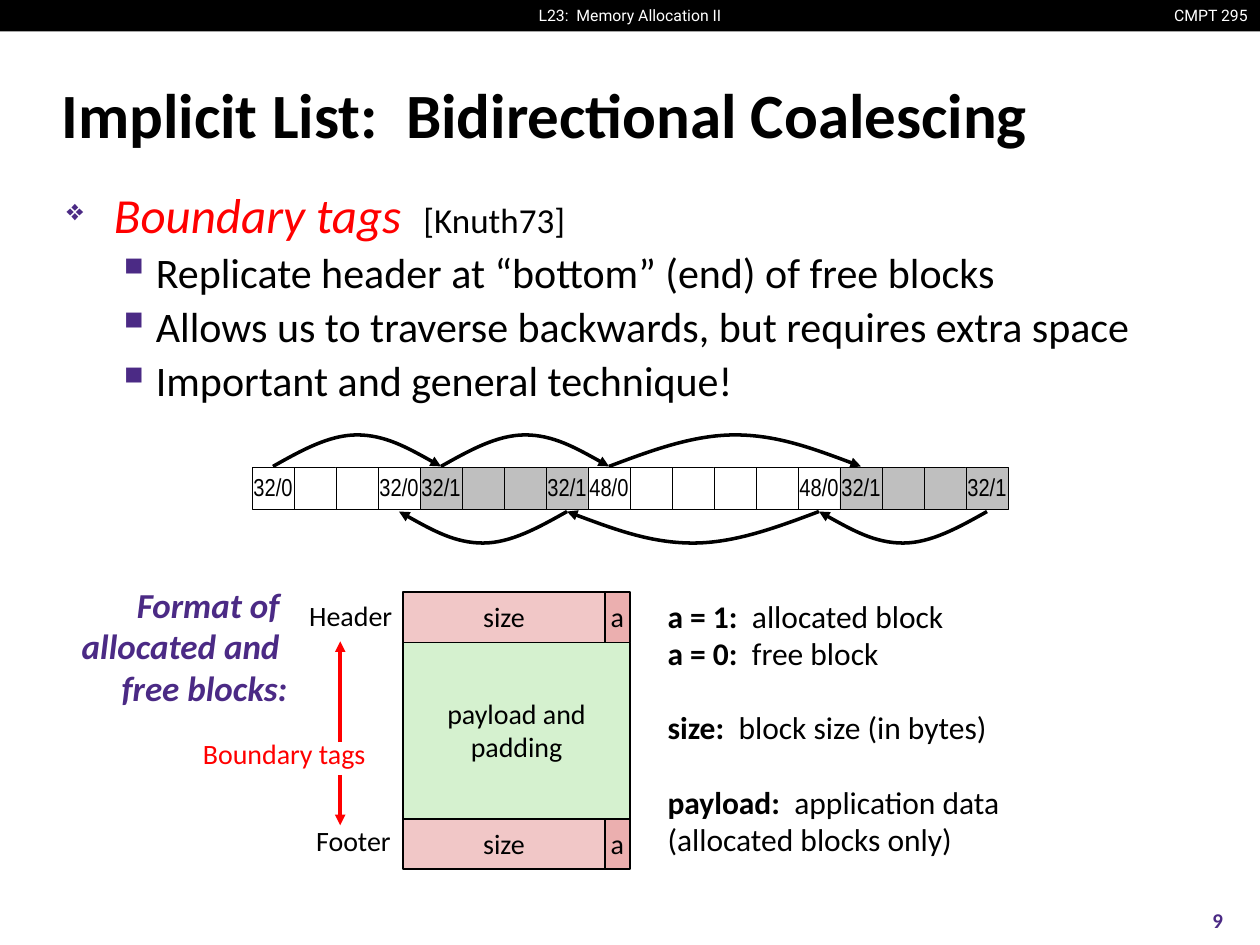
import dataclasses

import pptx
import pptx.dml.color
import pptx.enum.shapes
import pptx.enum.text
import pptx.oxml.ns
import pptx.oxml.xmlchemy
import pptx.util
import lxml.etree

Pt = pptx.util.Pt
ALIGN = pptx.enum.text.PP_ALIGN
ANCHOR = pptx.enum.text.MSO_ANCHOR
FIT = pptx.enum.text.MSO_AUTO_SIZE
qn = pptx.oxml.ns.qn


@dataclasses.dataclass(frozen=True)
class Theme:
    body: str = "Calibri"
    bar: str = "Roboto"
    cell: str = "Arial Narrow"
    black: str = "000000"
    white: str = "FFFFFF"
    purple: str = "4B2A85"
    red: str = "FF0000"
    allocated: str = "BFBFBF"
    tag: str = "F1C7C7"
    flag: str = "EBAFAF"
    payload: str = "D5F1CF"
    title_size: int = 36
    lead_size: int = 28
    point_size: int = 24
    note_size: int = 20
    legend_size: int = 18
    label_size: int = 16
    cell_size: int = 14
    page_size: int = 12
    bar_size: int = 9


def rgb(value):
    return pptx.dml.color.RGBColor.from_string(value)


class Deck:
    def __init__(self, theme):
        self.theme = theme
        self.prs = pptx.Presentation()
        self.prs.slide_width, self.prs.slide_height = Pt(720), Pt(540)
        self.slide = self.prs.slides.add_slide(self.prs.slide_layouts[5])

    def run(self, p, text, size, color=None, font=None, bold=False, italic=False):
        for i, line in enumerate(text.split("\n")):
            if i:
                p.add_line_break()
            r = p.add_run()
            r.text = line
            r.font.name = font or self.theme.body
            r.font.size = Pt(size)
            r.font.bold, r.font.italic = bold, italic
            r.font.color.rgb = rgb(color or self.theme.black)

    def indent(self, p, left, hanging):
        pPr = p._p.get_or_add_pPr()
        pPr.set("marL", str(Pt(left)))
        pPr.set("indent", str(-Pt(hanging)))
        return pPr

    def bullet(self, p, char, percent, left, hanging):
        pPr = self.indent(p, left, hanging)
        color = lxml.etree.SubElement(pPr, qn("a:buClr"))
        lxml.etree.SubElement(color, qn("a:srgbClr"), val=self.theme.purple)
        lxml.etree.SubElement(pPr, qn("a:buSzPct"), val=str(percent * 1000))
        lxml.etree.SubElement(pPr, qn("a:buChar"), char=char)

    def title(self, text, x, y, w, h):
        s = self.slide.shapes.title
        s.left, s.top, s.width, s.height = Pt(x), Pt(y), Pt(w), Pt(h)
        tf = s.text_frame
        tf.auto_size, tf.vertical_anchor = FIT.NONE, ANCHOR.MIDDLE
        p = tf.paragraphs[0]
        p.alignment = ALIGN.LEFT
        self.indent(p, 9.4, 9.4)
        self.run(p, text, self.theme.title_size, bold=True)

    def text_box(self, x, y, w, h, wrap=False, fit=FIT.SHAPE_TO_FIT_TEXT):
        tf = self.slide.shapes.add_textbox(Pt(x), Pt(y), Pt(w), Pt(h)).text_frame
        tf.word_wrap, tf.auto_size = wrap, fit
        return tf

    def label(self, text, x, y, w, h, size, align=ALIGN.RIGHT, spacing=0.98,
              anchor=ANCHOR.TOP, fit=FIT.SHAPE_TO_FIT_TEXT, **style):
        tf = self.text_box(x, y, w, h, fit=fit)
        tf.vertical_anchor = anchor
        p = tf.paragraphs[0]
        p.alignment, p.line_spacing = align, spacing
        self.run(p, text, size, **style)

    def box(self, text, x, y, w, h, fill, line=None, size=None, font=None, inset=7.2):
        s = self.slide.shapes.add_shape(
            pptx.enum.shapes.MSO_SHAPE.RECTANGLE, Pt(x), Pt(y), Pt(w), Pt(h))
        s.shadow.inherit = False
        s.fill.solid()
        s.fill.fore_color.rgb = rgb(fill)
        if line:
            s.line.color.rgb = rgb(self.theme.black)
            s.line.width = Pt(line)
        else:
            s.line.fill.background()
        if text:
            tf = s.text_frame
            tf.word_wrap, tf.vertical_anchor = False, ANCHOR.MIDDLE
            tf.margin_left = tf.margin_right = Pt(inset)
            p = tf.paragraphs[0]
            p.alignment, p.line_spacing = ALIGN.CENTER, 0.98
            self.run(p, text, size or self.theme.label_size, font=font)

    def stroke(self, s, color):
        s.line.color.rgb = rgb(color)
        s.line.width = Pt(2)
        ln = s.element.spPr.find(qn("a:ln"))
        lxml.etree.SubElement(ln, qn("a:tailEnd"), type="triangle")

    def arrow(self, x, y1, y2, color):
        s = self.slide.shapes.add_connector(
            pptx.enum.shapes.MSO_CONNECTOR.STRAIGHT, Pt(x), Pt(y1), Pt(x), Pt(y2))
        self.stroke(s, color)
        lxml.etree.SubElement(s.element.spPr, qn("a:effectLst"))

    def arc(self, x1, x2, y, rise):
        steps = ((1/6, 0.5), (1/3, 1), (1/2, 1), (2/3, 1), (5/6, 0.5), (1, 0))
        points = [(Pt(x1 + (x2 - x1) * u), Pt(y + rise * v)) for u, v in steps]
        builder = self.slide.shapes.build_freeform(Pt(x1), Pt(y))
        builder.add_line_segments(points, close=False)
        s = builder.convert_to_shape()
        segments = list(s.element.iter(qn("a:lnTo")))
        outline = segments[0].getparent()
        for start in (0, 3):
            curve = lxml.etree.SubElement(outline, qn("a:cubicBezTo"))
            for segment in segments[start:start + 3]:
                curve.append(segment[0])
                outline.remove(segment)
        s.shadow.inherit = False
        s.fill.background()
        self.stroke(s, self.theme.black)


def add_bullets(deck):
    t = deck.theme
    tf = deck.text_box(31, 107.3, 658.8, 144, wrap=True, fit=FIT.NONE)
    p = tf.paragraphs[0]
    p.line_spacing, p.space_before = 0.83, Pt(12.5)
    deck.bullet(p, "❖", 60, 27, 27)
    deck.run(p, "Boundary tags  ", t.lead_size, t.red, italic=True)
    deck.run(p, "[Knuth73]", t.note_size)
    for text in ("Replicate header at “bottom” (end) of free blocks",
                 "Allows us to traverse backwards, but requires extra space",
                 "Important and general technique!"):
        p = tf.add_paragraph()
        p.level, p.line_spacing, p.space_before = 1, 0.88, Pt(5.6)
        deck.bullet(p, "▪", 110, 51, 22.5)
        deck.run(p, text, t.point_size)


def add_heap(deck):
    t = deck.theme
    left, top, word = 144, 267, 24
    blocks = ((4, "32/0"), (4, "32/1"), (6, "48/0"), (4, "32/1"))
    headers, footers = [], []
    x = left
    for words, tag in blocks:
        fill = t.allocated if tag.endswith("1") else t.white
        for i in range(words):
            text = tag if i in (0, words - 1) else ""
            deck.box(text, x + i * word, top, word, word, fill, 0.25, t.cell_size, t.cell)
        headers.append(x + word / 2)
        x += words * word
        footers.append(x - word / 2)
    for here, there in zip(headers, headers[1:]):
        deck.arc(here, there, 266.5, -18)
    for there, here in zip(footers, footers[1:]):
        deck.arc(here, there, 292.3, 18)


def add_format(deck):
    t = deck.theme
    for y in (338.4, 468):
        deck.box("size", 230.4, y, 115.2, 28.8, t.tag, 1)
        deck.box("a", 345.6, y, 14.4, 28.8, t.flag, 1, inset=0)
    deck.box("payload and\npadding", 230.4, 367.2, 129.6, 100.8, t.payload, 1)
    deck.label("Format of \nallocated and \nfree blocks:", 36, 331.2, 135.4, 78.5,
               t.note_size, color=t.purple, bold=True, italic=True)
    deck.label("Header", 167.8, 337.7, 63.4, 28.8, t.label_size,
               anchor=ANCHOR.MIDDLE, fit=FIT.NONE)
    deck.label("Footer", 172.8, 468, 57.6, 26.6, t.label_size)
    deck.label("Boundary tags", 108, 418.3, 108, 26.6, t.label_size, color=t.red)
    deck.arrow(194.4, 424.1, 366.5, t.red)
    deck.arrow(194.4, 442.8, 471.6, t.red)


def add_legend(deck):
    size = deck.theme.legend_size
    tf = deck.text_box(374.4, 338.4, 205.9, 157)
    lines = (("a = 1:  ", "allocated block", 0), ("a = 0:  ", "free block", 0),
             ("size:  ", "block size (in bytes)", 21.5),
             ("payload:  ", "application data", 21.5),
             ("", "(allocated blocks only)", 0))
    for i, (term, meaning, gap) in enumerate(lines):
        p = tf.add_paragraph() if i else tf.paragraphs[0]
        p.line_spacing, p.space_before = 0.98, Pt(gap)
        if term:
            deck.run(p, term, size, bold=True)
        deck.run(p, meaning, size)


def main():
    t = Theme()
    deck = Deck(t)
    deck.box("", 0, 0, 720, 18, t.black)
    bar = dict(size=t.bar_size, color=t.white, font=t.bar, spacing=1)
    deck.label("CMPT 295", 661.7, 0, 58.3, 18, **bar)
    deck.label("L23:  Memory Allocation II", 300.2, 0, 119.5, 18, align=ALIGN.CENTER, **bar)
    deck.title("Implicit List:  Bidirectional Coalescing", 28, 34.6, 661.7, 59.8)
    add_bullets(deck)
    add_heap(deck)
    add_format(deck)
    add_legend(deck)
    deck.label("9", 671.8, 511.2, 48.2, 28.8, t.page_size, ALIGN.CENTER, 1,
               ANCHOR.MIDDLE, FIT.NONE, color=t.purple, bold=True)
    deck.prs.save("out.pptx")


if __name__ == "__main__":
    main()
